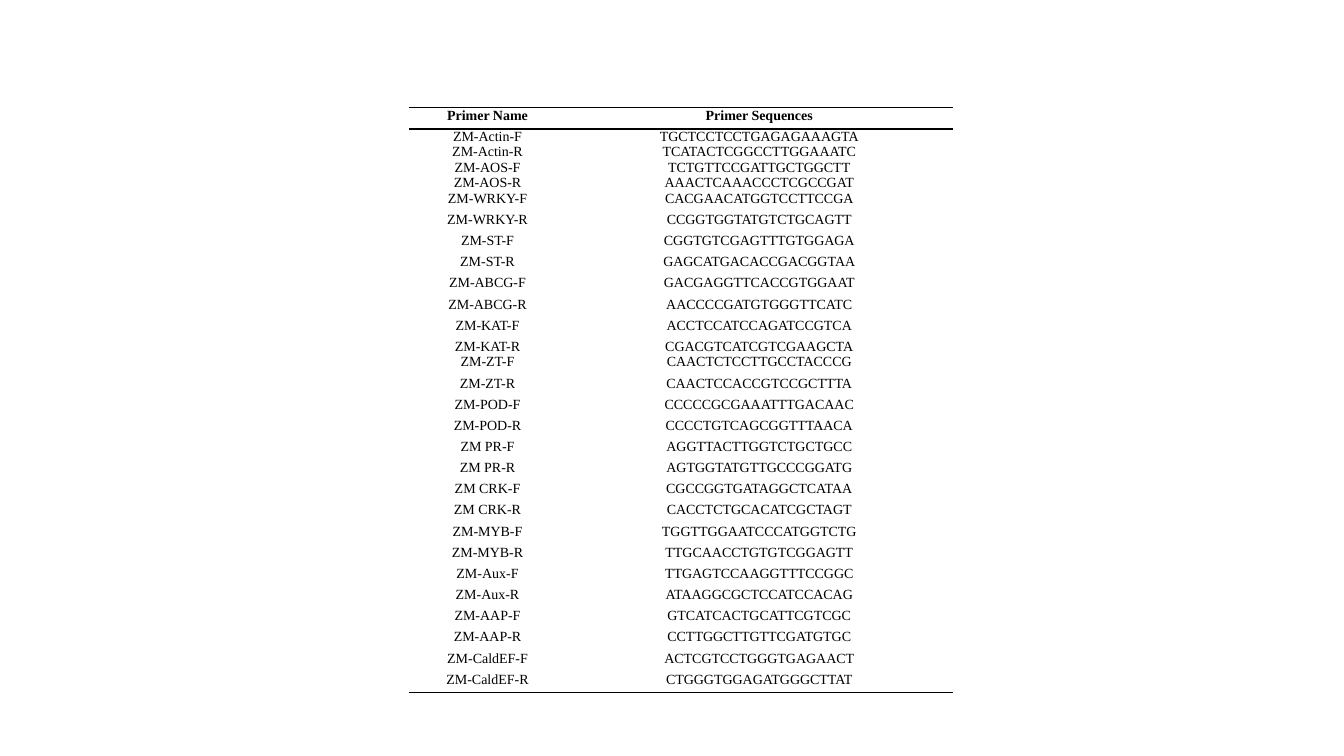
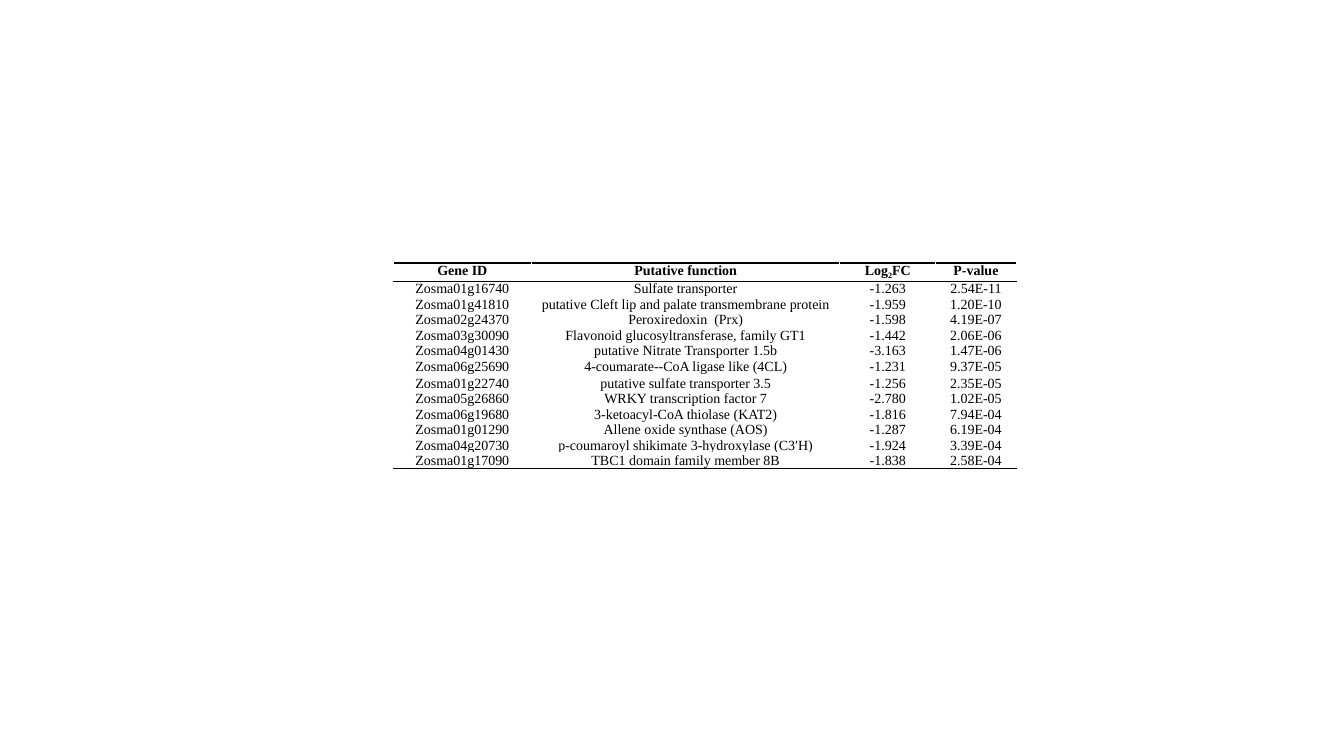
"""Build two slides, each with a ruled table of gene data."""
from dataclasses import dataclass

from lxml import etree
from pptx import Presentation
from pptx.dml.color import RGBColor
from pptx.enum import text
from pptx.oxml import ns
from pptx.util import Inches, Pt


@dataclass(frozen=True)
class Theme:
    """Hold the look that both tables share."""
    font: str = "Times New Roman"
    size: int = 10
    ink: str = "000000"
    paper: str = "FFFFFF"
    rule: int = 1
    inset: float = 0.07
    tight: float = 0.15
    loose: float = 0.21


LOOK = Theme()

PRIMERS = [
    ("ZM-Actin", "TGCTCCTCCTGAGAGAAAGTA", "TCATACTCGGCCTTGGAAATC"),
    ("ZM-AOS", "TCTGTTCCGATTGCTGGCTT", "AAACTCAAACCCTCGCCGAT"),
    ("ZM-WRKY", "CACGAACATGGTCCTTCCGA", "CCGGTGGTATGTCTGCAGTT"),
    ("ZM-ST", "CGGTGTCGAGTTTGTGGAGA", "GAGCATGACACCGACGGTAA"),
    ("ZM-ABCG", "GACGAGGTTCACCGTGGAAT", "AACCCCGATGTGGGTTCATC"),
    ("ZM-KAT", "ACCTCCATCCAGATCCGTCA", "CGACGTCATCGTCGAAGCTA"),
    ("ZM-ZT", "CAACTCTCCTTGCCTACCCG", "CAACTCCACCGTCCGCTTTA"),
    ("ZM-POD", "CCCCCGCGAAATTTGACAAC", "CCCCTGTCAGCGGTTTAACA"),
    ("ZM PR", "AGGTTACTTGGTCTGCTGCC", "AGTGGTATGTTGCCCGGATG"),
    ("ZM CRK", "CGCCGGTGATAGGCTCATAA", "CACCTCTGCACATCGCTAGT"),
    ("ZM-MYB", "TGGTTGGAATCCCATGGTCTG", "TTGCAACCTGTGTCGGAGTT"),
    ("ZM-Aux", "TTGAGTCCAAGGTTTCCGGC", "ATAAGGCGCTCCATCCACAG"),
    ("ZM-AAP", "GTCATCACTGCATTCGTCGC", "CCTTGGCTTGTTCGATGTGC"),
    ("ZM-CaldEF", "ACTCGTCCTGGGTGAGAACT", "CTGGGTGGAGATGGGCTTAT"),
]

GENES = [
    ("Gene ID", "Putative function", "Log|2|FC", "P-value"),
    ("Zosma01g16740", "Sulfate transporter", "-1.263", "2.54E-11"),
    ("Zosma01g41810", "putative Cleft lip and palate transmembrane protein", "-1.959", "1.20E-10"),
    ("Zosma02g24370", "Peroxiredoxin  (Prx)", "-1.598", "4.19E-07"),
    ("Zosma03g30090", "Flavonoid glucosyltransferase, family GT1", "-1.442", "2.06E-06"),
    ("Zosma04g01430", "putative Nitrate Transporter 1.5b", "-3.163", "1.47E-06"),
    ("Zosma06g25690", "4-coumarate--CoA ligase like (4CL)", "-1.231", "9.37E-05"),
    ("Zosma01g22740", "putative sulfate transporter 3.5", "-1.256", "2.35E-05"),
    ("Zosma05g26860", "WRKY transcription factor 7", "-2.780", "1.02E-05"),
    ("Zosma06g19680", "3-ketoacyl-CoA thiolase (KAT2)", "-1.816", "7.94E-04"),
    ("Zosma01g01290", "Allene oxide synthase (AOS)", "-1.287", "6.19E-04"),
    ("Zosma04g20730", "p-coumaroyl shikimate 3-hydroxylase (C3′H)", "-1.924", "3.39E-04"),
    ("Zosma01g17090", "TBC1 domain family member 8B", "-1.838", "2.58E-04"),
]


def set_edge(cell, side, color):
    """Draw one cell border, or clear it when there is no color."""
    props = cell._tc.get_or_add_tcPr()
    line = etree.SubElement(props, ns.qn(f"a:ln{side}"), w=str(Pt(LOOK.rule)))
    if color is None:
        etree.SubElement(line, ns.qn("a:noFill"))
    else:
        fill = etree.SubElement(line, ns.qn("a:solidFill"))
        etree.SubElement(fill, ns.qn("a:srgbClr"), val=color)


def set_text(cell, words, bold):
    """Write centred text, with every second piece between bars lowered."""
    para = cell.text_frame.paragraphs[0]
    para.alignment = text.PP_ALIGN.CENTER
    for i, piece in enumerate(words.split("|")):
        run = para.add_run()
        run.text = piece
        run.font.name = LOOK.font
        run.font.size = Pt(LOOK.size)
        run.font.bold = bold
        run.font.color.rgb = RGBColor.from_string(LOOK.ink)
        if i % 2:
            run._r.get_or_add_rPr().set("baseline", "-25000")


def style_cell(cell, row, last, side):
    """Set the rules, fill and margins of a cell by its row."""
    top = LOOK.ink if row in (0, 1) else side
    base = LOOK.ink if row in (0, last) else side
    for key, color in zip("LRTB", (side, side, top, base)):
        set_edge(cell, key, color)
    cell.fill.solid()
    cell.fill.fore_color.rgb = RGBColor.from_string(LOOK.paper)
    cell.margin_left = cell.margin_right = Inches(LOOK.inset)
    cell.margin_top = cell.margin_bottom = 0


def add_grid(deck, rows, left, top, widths, heights, side=None):
    """Add a slide with one ruled table."""
    slide = deck.slides.add_slide(deck.slide_layouts[6])
    frame = slide.shapes.add_table(
        len(rows), len(widths), Inches(left), Inches(top),
        Inches(sum(widths)), Inches(sum(heights)))
    grid = frame.table
    grid.first_row = grid.horz_banding = False
    for col, width in zip(grid.columns, widths):
        col.width = Inches(width)
    for i, (row, height) in enumerate(zip(rows, heights)):
        grid.rows[i].height = Inches(height)
        for j, words in enumerate(row):
            cell = grid.cell(i, j)
            style_cell(cell, i, len(rows) - 1, side)
            set_text(cell, words, i == 0)


def add_primers(deck):
    """Add the table of forward and reverse primers."""
    rows = [("Primer Name", "Primer Sequences")]
    for name, *pair in PRIMERS:
        rows += [(f"{name}-{end}", seq) for end, seq in zip("FR", pair)]
    short = (1, 2, 3, 4, 12)
    heights = [LOOK.tight if i in short else LOOK.loose for i in range(len(rows))]
    add_grid(deck, rows, 4.06, 1.07, (1.55, 3.84), heights)


def add_genes(deck):
    """Add the table of genes with their fold change."""
    tall = {0: 0.18, 6: 0.17}
    heights = [tall.get(i, LOOK.tight) for i in range(len(GENES))]
    add_grid(deck, GENES, 3.9, 2.61, (1.37, 3.06, 0.95, 0.8), heights, LOOK.paper)


def main():
    """Build and save the deck."""
    deck = Presentation()
    deck.slide_width, deck.slide_height = Inches(13.33), Inches(7.5)
    add_primers(deck)
    add_genes(deck)
    deck.save("out.pptx")


if __name__ == "__main__":
    main()
